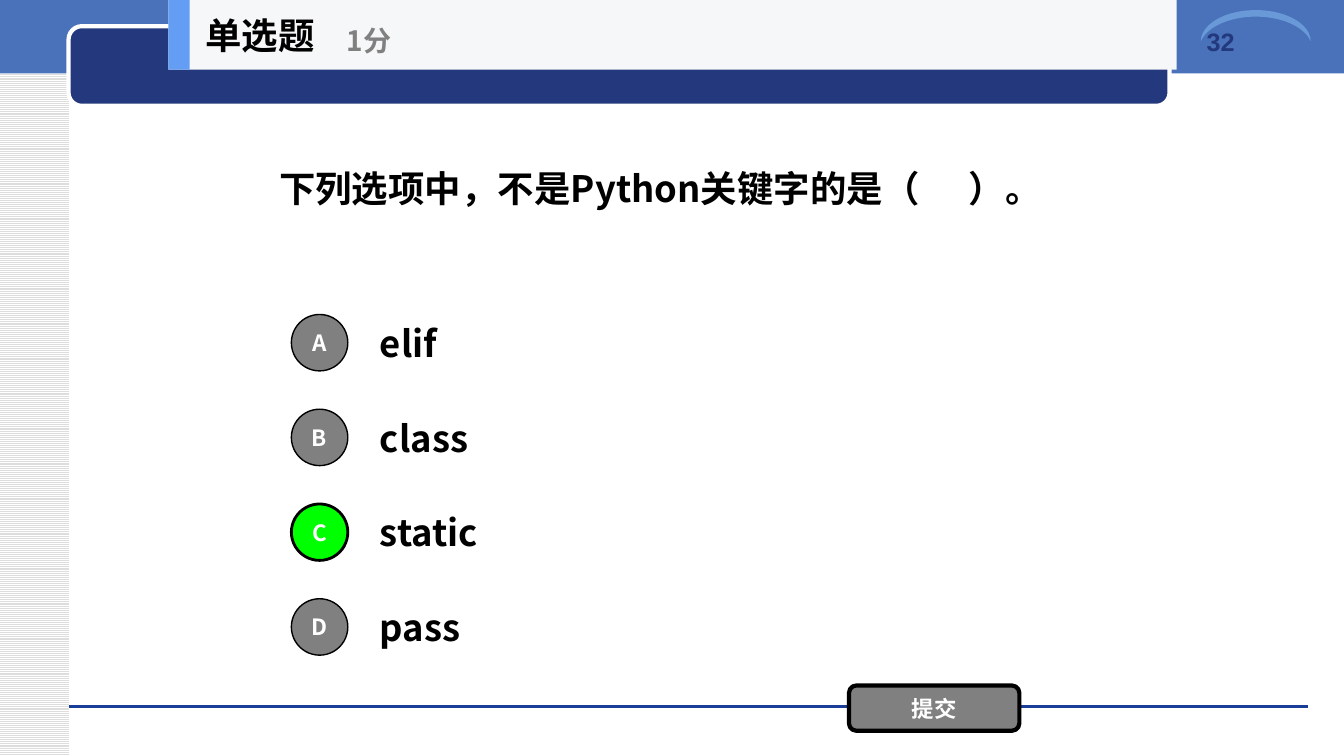
from lxml.etree import SubElement
from pptx import Presentation
from pptx.dml.color import RGBColor
from pptx.enum.dml import MSO_PATTERN as Pattern
from pptx.enum.shapes import MSO_CONNECTOR as Connector, MSO_SHAPE as Shape
from pptx.enum.text import MSO_ANCHOR as Anchor, PP_ALIGN as Align
from pptx.oxml.ns import qn
from pptx.util import Pt

EMU_PER_PX = 9144
CJK = "Noto Sans CJK SC"
NAVY, BLACK, WHITE, GRAY, GREEN = "23387D", "000000", "FFFFFF", "808080", "00FF00"
OPTIONS = [("A", "elif"), ("B", "class"), ("C", "static"), ("D", "pass")]
ANSWER = "C"


def px(*lengths):
    return [length * EMU_PER_PX for length in lengths]


def color(code):
    return RGBColor.from_string(code)


def add_shape(page, kind, box, fill, line=None, width=1):
    shape = page.shapes.add_shape(kind, *px(*box))
    shape.shadow.inherit = False
    shape.fill.solid()
    shape.fill.fore_color.rgb = color(fill)
    if line:
        shape.line.color.rgb = color(line)
        shape.line.width = Pt(width)
    else:
        shape.line.fill.background()
    return shape


def add_run(para, text, size, code, font=CJK, spacing=0):
    span = para.add_run()
    span.text = text
    span.font.size = Pt(size)
    span.font.bold = True
    span.font.color.rgb = color(code)
    span.font.name = font
    props = span.font._element
    SubElement(props, qn("a:ea")).set("typeface", font)
    if spacing:
        props.set("spc", str(spacing * 100))


def add_text(page, box, anchor=Anchor.MIDDLE, wrap=True):
    frame = page.shapes.add_textbox(*px(*box)).text_frame
    frame.word_wrap = wrap
    frame.vertical_anchor = anchor
    return frame.paragraphs[0]


def add_label(shape, text):
    frame = shape.text_frame
    frame.margin_left = frame.margin_right = 0
    frame.margin_top = frame.margin_bottom = 0
    frame.vertical_anchor = Anchor.MIDDLE
    para = frame.paragraphs[0]
    para.alignment = Align.CENTER
    add_run(para, text, 16, WHITE)


def draw_backdrop(page, left, top, width, height):
    stripes = add_shape(page, Shape.RECTANGLE, (left, top, 68, height), WHITE)
    stripes.fill.patterned()
    stripes.fill.pattern = Pattern.LIGHT_HORIZONTAL
    stripes.fill.fore_color.rgb = color("DDDDDD")
    stripes.fill.back_color.rgb = color(WHITE)
    add_shape(page, Shape.RECTANGLE, (left, top, width, 73), "4972BB")
    rule = page.shapes.add_connector(
        Connector.STRAIGHT, *px(left + 68, top + 701, left + 1297, top + 701))
    rule.line.color.rgb = color("1A3D97")
    rule.line.width = Pt(0)
    SubElement(rule._element.spPr, qn("a:effectLst"))
    add_shape(page, Shape.ROUNDED_RECTANGLE, (left + 68, top + 26, 1092, 79), NAVY, WHITE, 3)
    moon = add_shape(page, Shape.MOON, (left + 1230, top - 29, 31, 109), "6A99D8")
    moon.adjustments[0] = 0.21
    moon.rotation = 90
    number = add_text(page, (left + 1187, top + 21, 121, 71), Anchor.TOP)
    add_run(number, "32", 18, NAVY, "Arial")


def draw_question(page, left, top, width, height):
    para = add_text(page, (left, top, width, height))
    add_run(para, "下列选项中，不是Python关键字的是（", 26, BLACK)
    add_run(para, " ", 26, BLACK, spacing=29)
    add_run(para, "）。", 26, BLACK)


def draw_options(page, left, top, width, pitch):
    for row, (letter, word) in enumerate(OPTIONS):
        row_top = top + row * pitch
        para = add_text(page, (left + 78, row_top, width - 78, 70))
        add_run(para, word, 26, BLACK)
        chosen = letter == ANSWER
        badge = add_shape(page, Shape.OVAL, (left, row_top + 7, 56, 56),
                          GREEN if chosen else GRAY, BLACK, 2 if chosen else 1)
        add_label(badge, letter)


def draw_submit(page, *box):
    button = add_shape(page, Shape.ROUNDED_RECTANGLE, box, GRAY, BLACK, 3)
    add_label(button, "提交")


def draw_title_bar(page, left, top, width, height):
    add_shape(page, Shape.RECTANGLE, (left, top, width, height), "F6F7F8")
    add_shape(page, Shape.RECTANGLE, (left, top, 21, height), "639EF4")
    title = add_text(page, (left + 27, top, 208, height), wrap=False)
    add_run(title, "单选题", 26, BLACK)
    score = add_text(page, (left + 167, top + 12, 250, 56), wrap=False)
    add_run(score, "1分", 20, GRAY)


def main():
    deck = Presentation()
    deck.slide_width, deck.slide_height = px(1333, 750)
    page = deck.slides.add_slide(deck.slide_layouts[6])
    draw_backdrop(page, 0, 0, 1333, 750)
    draw_question(page, 267, 69, 800, 234)
    draw_options(page, 289, 305, 778, 94)
    draw_submit(page, 842, 680, 169, 45)
    draw_title_bar(page, 167, 0, 1000, 69)
    deck.save("out.pptx")


if __name__ == "__main__":
    main()
